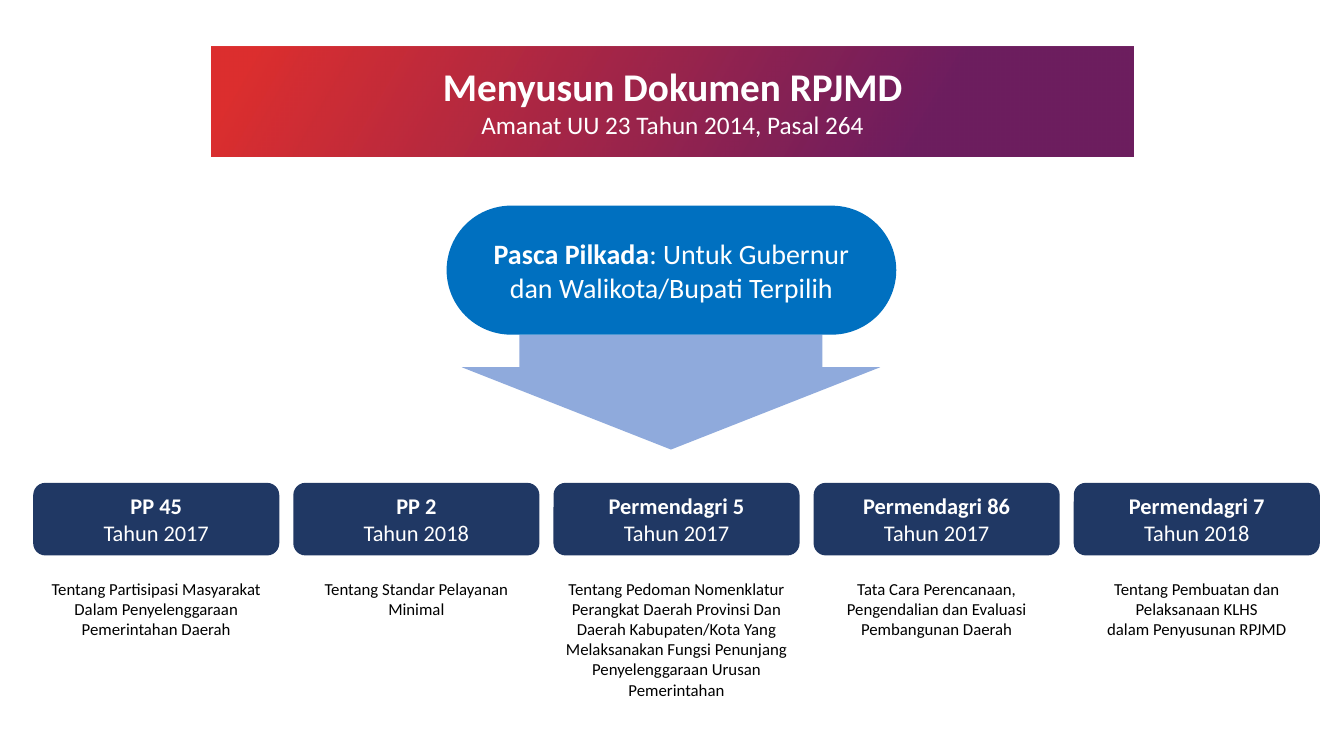
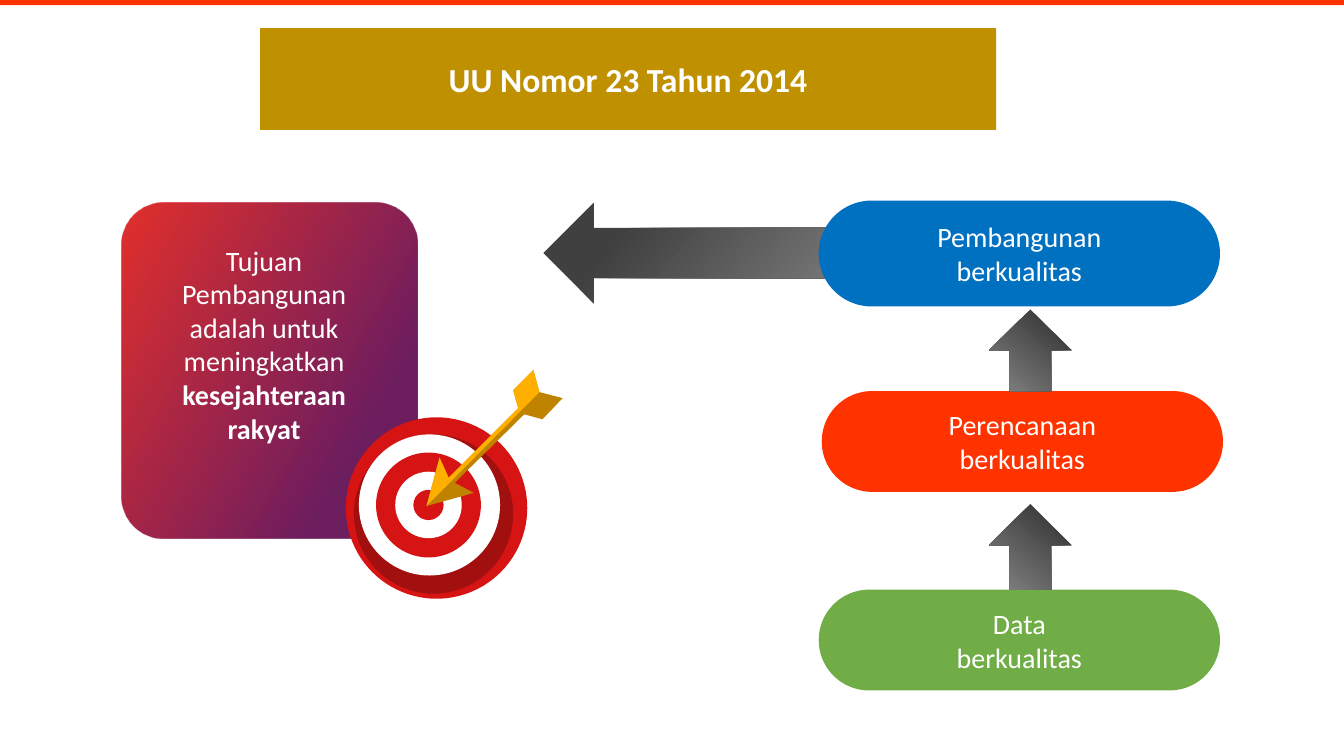
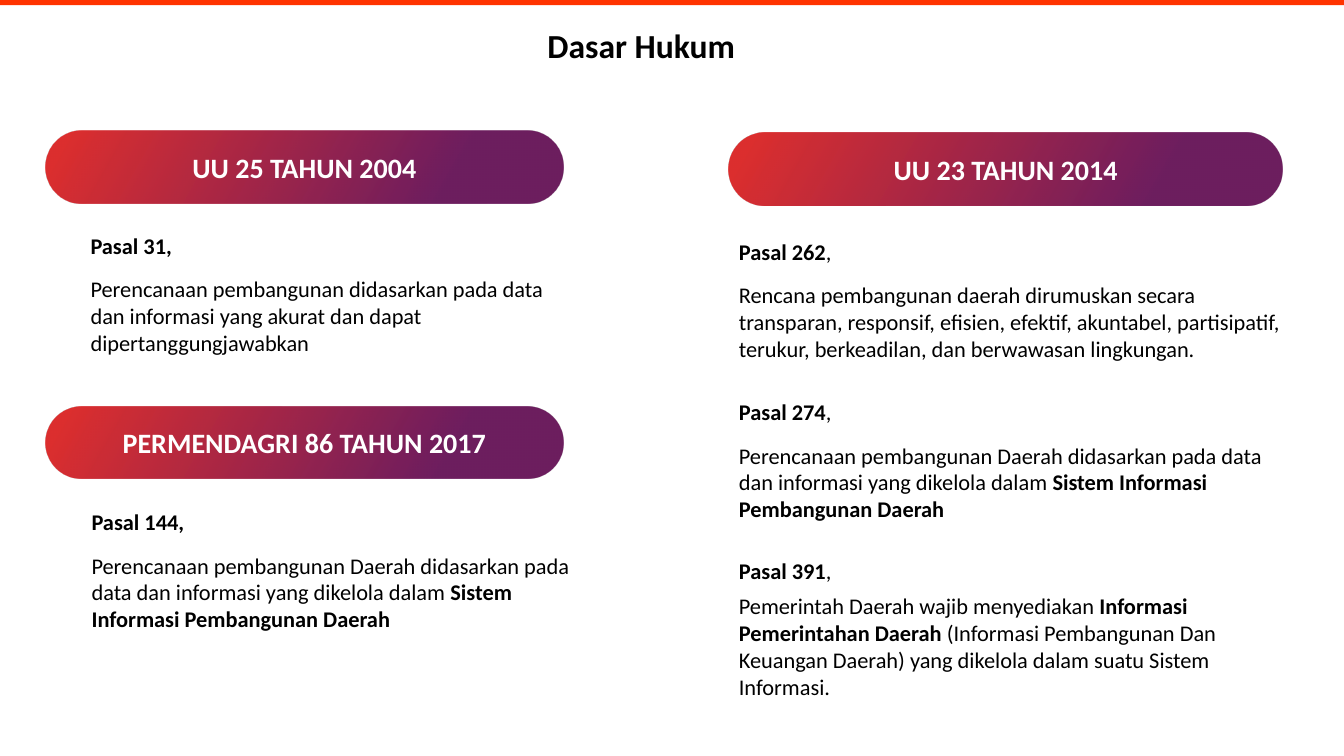
from dataclasses import dataclass

from lxml import etree
from pptx import Presentation
from pptx.dml.color import RGBColor
from pptx.enum.shapes import MSO_SHAPE
from pptx.enum.text import MSO_ANCHOR, MSO_AUTO_SIZE, PP_ALIGN
from pptx.oxml import parse_xml
from pptx.oxml.ns import nsdecls, qn
from pptx.util import Inches, Pt

ROUNDED, OVAL, RECT = MSO_SHAPE.ROUNDED_RECTANGLE, MSO_SHAPE.OVAL, MSO_SHAPE.RECTANGLE
UP, DOWN, LEFT_ARROW = MSO_SHAPE.UP_ARROW, MSO_SHAPE.DOWN_ARROW, MSO_SHAPE.LEFT_ARROW
CENTER, LEFT = PP_ALIGN.CENTER, PP_ALIGN.LEFT
TOP, MIDDLE = MSO_ANCHOR.TOP, MSO_ANCHOR.MIDDLE
TITLE_ONLY = 5


@dataclass(frozen=True)
class Gradient:
    """Two (position, colour) stops, a clockwise angle and an opacity in percent."""
    stops: tuple
    angle: int
    opacity: int = 100


@dataclass(frozen=True)
class Theme:
    font: str = "Calibri"
    white: str = "FFFFFF"
    black: str = "000000"
    blue: str = "0070C0"
    pale_blue: str = "8FAADC"
    navy: str = "203864"
    orange: str = "FF3300"
    green: str = "70AD47"
    gold: str = "BF9000"
    target_red: str = "D71414"
    target_shade: str = "A10F0F"
    dart: str = "FFAF00"
    dart_shade: str = "BF8300"
    brand: Gradient = Gradient(((0.05, "D71414"), (0.77, "5A004B")), 30, 88)
    arrow_up: Gradient = Gradient(((0.23, "404040"), (0.94, "808080")), 130)
    arrow_left: Gradient = Gradient(((0.23, "404040"), (0.94, "808080")), 40)
    hero: int = 28
    title: int = 24
    subtitle: int = 18
    label: int = 20
    body: int = 16
    caption: int = 12


T = Theme()

REGULATIONS = [
    ("PP 45", "Tahun 2017",
     ["Tentang Partisipasi Masyarakat Dalam Penyelenggaraan Pemerintahan Daerah"]),
    ("PP 2", "Tahun 2018", ["Tentang Standar Pelayanan Minimal"]),
    ("Permendagri 5", "Tahun 2017",
     ["Tentang Pedoman Nomenklatur Perangkat Daerah Provinsi Dan Daerah Kabupaten/Kota "
      "Yang Melaksanakan Fungsi Penunjang Penyelenggaraan Urusan Pemerintahan"]),
    ("Permendagri 86", "Tahun 2017",
     ["Tata Cara Perencanaan, Pengendalian dan Evaluasi", "Pembangunan Daerah"]),
    ("Permendagri 7", "Tahun 2018",
     ["Tentang Pembuatan dan Pelaksanaan KLHS", "dalam Penyusunan RPJMD"]),
]

QUALITY_STEPS = [
    ("Pembangunan berkualitas", (8.12, 1.99, 3.98, 1.05), T.blue),
    ("Perencanaan berkualitas", (8.15, 3.88, 3.98, 1), T.orange),
    ("Data berkualitas", (8.12, 5.85, 3.98, 1), T.green),
]

LAWS = [
    ("UU 25 TAHUN 2004", (0.45, 1.3, 5.14, 0.72)),
    ("PERMENDAGRI 86 TAHUN 2017", (0.45, 4.03, 5.14, 0.72)),
    ("UU 23 TAHUN 2014", (7.23, 1.32, 5.49, 0.72)),
]

ARTICLES = [
    ((0.8, 2.25, 4.9, 1.35), 12, "**Pasal 31,**",
     "Perencanaan pembangunan didasarkan pada data dan informasi yang akurat dan dapat "
     "dipertanggungjawabkan"),
    ((0.81, 4.99, 5.08, 1.35), 12, "**Pasal 144,**",
     "Perencanaan pembangunan Daerah didasarkan pada data dan informasi yang dikelola "
     "dalam **Sistem Informasi Pembangunan Daerah**"),
    ((7.23, 2.31, 5.65, 1.35), 12, "**Pasal 262**,",
     "Rencana pembangunan daerah dirumuskan secara transparan, responsif, efisien, efektif, "
     "akuntabel, partisipatif, terukur, berkeadilan, dan berwawasan lingkungan."),
    ((7.23, 3.9, 5.65, 1.35), 12, "**Pasal 274**,",
     "Perencanaan pembangunan Daerah didasarkan pada data dan informasi yang dikelola "
     "dalam **Sistem Informasi Pembangunan Daerah**"),
    ((7.23, 5.48, 5.65, 1.53), 6, "**Pasal 391**,",
     "Pemerintah Daerah wajib menyediakan **Informasi Pemerintahan Daerah** (Informasi "
     "Pembangunan Dan Keuangan Daerah) yang dikelola dalam suatu Sistem Informasi."),
]

TARGET_RINGS = [  # centre x, centre y, radius, colour
    (4.33, 5.04, 0.9, T.target_red),
    (4.3, 5.1, 0.79, T.target_shade),
    (4.26, 5.01, 0.7, T.white),
    (4.25, 5.01, 0.52, T.target_red),
    (4.25, 5.01, 0.33, T.white),
    (4.25, 5.01, 0.15, T.target_red),
]
DART_LIT_EDGE = [(5.35, 3.89), (5.29, 3.67), (5.09, 3.87), (5.14, 4.05), (4.45, 4.74),
                 (4.36, 4.54), (4.23, 5.02)]
DART_SHADED_EDGE = [(4.7, 4.89), (4.51, 4.79), (5.2, 4.11), (5.38, 4.16), (5.58, 3.95)]


def set_attrs(obj, values):
    for name, value in values.items():
        setattr(obj, name, value)


def place(sp, box):
    set_attrs(sp, dict(zip(("left", "top", "width", "height"), map(Inches, box))))


def paint(sp, fill):
    """Fill with a colour or a Gradient, without outline or shadow."""
    sp.shadow.inherit = False
    sp.line.fill.background()
    if not isinstance(fill, Gradient):
        sp.fill.solid()
        sp.fill.fore_color.rgb = RGBColor.from_string(fill)
        return
    sp.fill.gradient()
    sp.fill.gradient_angle = 360 - fill.angle
    for stop, (position, colour) in zip(sp.fill.gradient_stops, fill.stops):
        stop.position = position
        stop.color.rgb = RGBColor.from_string(colour)
    if fill.opacity < 100:
        for clr in sp.element.spPr.iter(qn("a:srgbClr")):
            etree.SubElement(clr, qn("a:alpha"), val=str(fill.opacity * 1000))


def write(sp, lines, color=T.white, align=CENTER, anchor=MIDDLE, space=0, margins=None):
    """Write (text, size) lines; ** switches bold on and off."""
    tf = sp.text_frame
    set_attrs(tf, {"word_wrap": True, "auto_size": MSO_AUTO_SIZE.NONE,
                   "vertical_anchor": anchor})
    set_attrs(tf, {f"margin_{side}": Inches(v) for side, v in (margins or {}).items()})
    for i, (text, size) in enumerate(lines):
        p = tf.add_paragraph() if i else tf.paragraphs[0]
        set_attrs(p, {"alignment": align, "space_after": Pt(space)})
        for j, part in enumerate(text.split("**")):
            if part:
                r = p.add_run()
                r.text = part
                set_attrs(r.font, {"name": T.font, "size": Pt(size), "bold": j % 2 == 1})
                r.font.color.rgb = RGBColor.from_string(color)


def add_shape(shapes, kind, box, fill, adjust=()):
    sp = shapes.add_shape(kind, *map(Inches, box))
    for i, value in enumerate(adjust):
        sp.adjustments[i] = value
    paint(sp, fill)
    return sp


def add_pill(slide, box, fill, lines, **text_format):
    write(add_shape(slide.shapes, ROUNDED, box, fill, [0.5]), lines, **text_format)


def add_text(slide, box, lines, **text_format):
    sp = slide.shapes.add_textbox(*map(Inches, box))
    write(sp, lines, color=T.black, anchor=TOP, **text_format)


def add_outline(shapes, points, fill):
    start, *rest = [tuple(map(Inches, point)) for point in points]
    builder = shapes.build_freeform(*start)
    builder.add_line_segments(rest, close=True)
    paint(builder.convert_to_shape(), fill)


def add_slide(prs, band=True):
    slide = prs.slides.add_slide(prs.slide_layouts[TITLE_ONLY])
    if band:
        add_shape(slide.shapes, RECT, (0, 0, 13.33, 0.05), T.orange)
    return slide


def set_pill_title(slide, box, fill, lines):
    title = slide.shapes.title
    place(title, box)
    title.element.spPr.append(parse_xml(
        f'<a:prstGeom {nsdecls("a")} prst="roundRect"><a:avLst>'
        '<a:gd name="adj" fmla="val 50000"/></a:avLst></a:prstGeom>'))
    paint(title, fill)
    write(title, lines)


def add_target(slide):
    shapes = slide.shapes.add_group_shape().shapes
    for x, y, radius, fill in TARGET_RINGS:
        add_shape(shapes, OVAL, (x - radius, y - radius, 2 * radius, 2 * radius), fill)
    add_outline(shapes, DART_LIT_EDGE + DART_SHADED_EDGE, T.dart_shade)
    add_outline(shapes, DART_LIT_EDGE, T.dart)


def build_mandate(prs):
    slide = add_slide(prs, band=False)
    set_pill_title(slide, (2.1, 0.46, 9.14, 1.09), T.brand,
                   [("**Menyusun Dokumen RPJMD**", T.hero),
                    ("Amanat UU 23 Tahun 2014, Pasal 264", T.subtitle)])
    add_shape(slide.shapes, DOWN, (4.58, 3.32, 4.15, 1.14), T.pale_blue, [0.724, 0.716])
    add_pill(slide, (4.43, 2.04, 4.46, 1.28), T.blue,
             [("**Pasca Pilkada**: Untuk Gubernur dan Walikota/Bupati Terpilih", T.label)])
    for i, (name, year, subject) in enumerate(REGULATIONS):
        left = 0.33 + 2.58 * i
        card = add_shape(slide.shapes, ROUNDED, (left, 4.79, 2.44, 0.72), T.navy)
        write(card, [(f"**{name}**", T.body), (year, T.body)])
        add_text(slide, (left, 5.69, 2.44, 1.31), [(line, T.caption) for line in subject])


def build_goal(prs):
    slide = add_slide(prs)
    set_pill_title(slide, (2.58, 0.28, 7.3, 1.01), T.gold,
                   [("**UU Nomor 23 Tahun 2014**", T.title)])
    add_shape(slide.shapes, LEFT_ARROW, (5.39, 2.01, 3.44, 1), T.arrow_left)
    for text, box, fill in QUALITY_STEPS:
        add_pill(slide, box, fill, [(text, T.label)], margins={"left": 0.95, "right": 0.95})
    for top, height in ((3.07, 0.81), (5, 0.85)):
        add_shape(slide.shapes, UP, (9.81, top, 0.82, height), T.arrow_up)
    goal = add_shape(slide.shapes, ROUNDED, (1.21, 2.01, 2.93, 3.33), T.brand, [0.143])
    write(goal, [("Tujuan Pembangunan adalah untuk meningkatkan **kesejahteraan rakyat**",
                  T.label)],
          anchor=TOP, margins={"left": 0.2, "right": 0.31, "top": 0.28})
    add_target(slide)


def build_legal_basis(prs):
    slide = add_slide(prs)
    title = slide.shapes.title
    place(title, (5.01, 0.14, 2.7, 0.56))
    write(title, [("**Dasar Hukum**", T.title)], color=T.black, anchor=TOP)
    title.text_frame.paragraphs[0].line_spacing = Pt(33)
    for name, box in LAWS:
        add_pill(slide, box, T.brand, [(f"**{name}**", T.label)])
    for box, space, article, text in ARTICLES:
        add_text(slide, box, [(article, T.body), (text, T.body)], align=LEFT, space=space)


def main():
    prs = Presentation()
    set_attrs(prs, {"slide_width": Inches(13.33), "slide_height": Inches(7.5)})
    for build in (build_mandate, build_goal, build_legal_basis):
        build(prs)
    prs.save("out.pptx")


if __name__ == "__main__":
    main()
